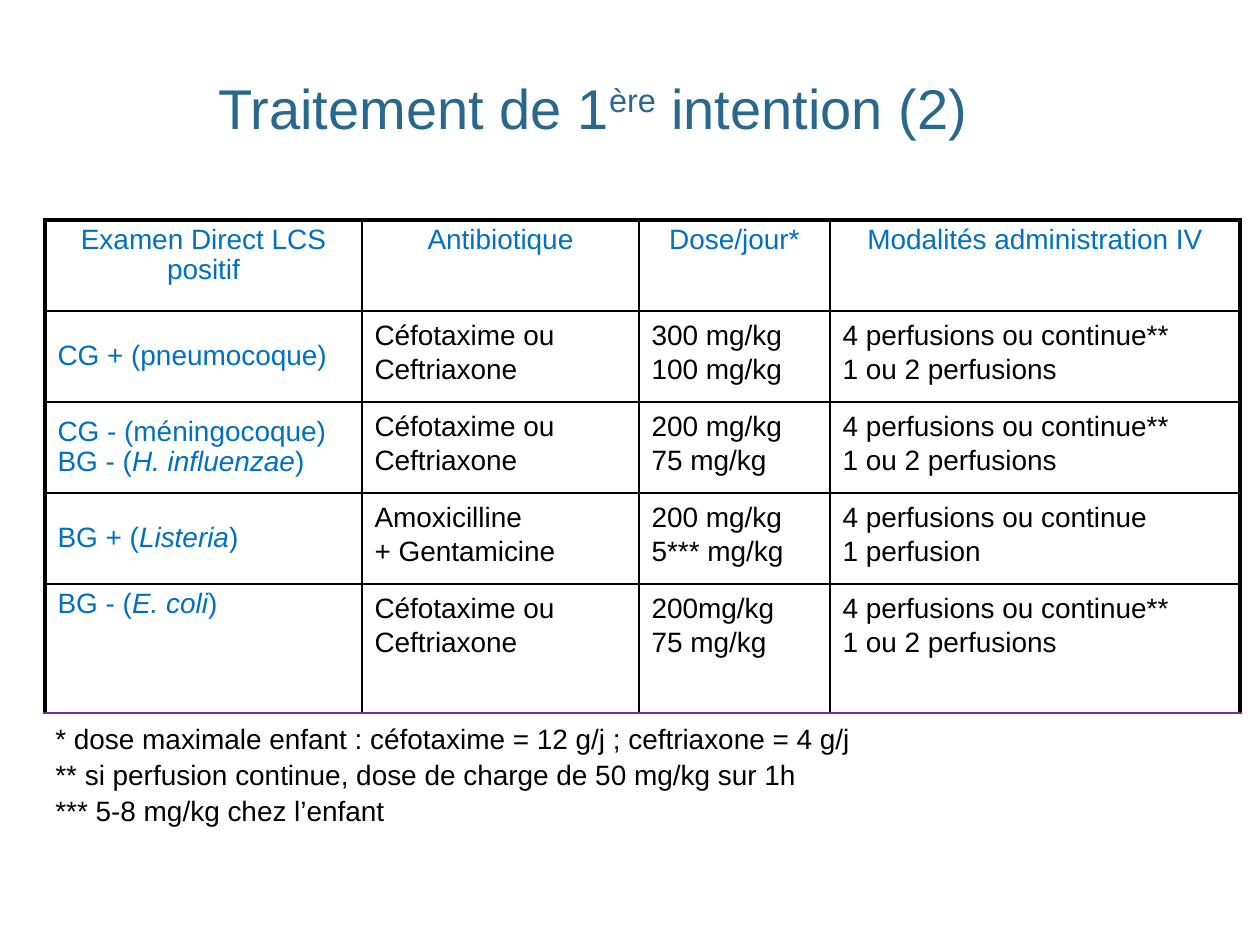
import pptx
import pptx.dml.color
import pptx.enum.text
import pptx.oxml
import pptx.oxml.ns
import pptx.util

PX = pptx.util.Inches(1) / 126
FONT = "Arial"
COLORS = {"title": "28688E", "label": "0070C0", "text": "000000",
          "border": "000000", "bottom": "7030A0", "cell": "FFFFFF"}
ALIGN = pptx.enum.text.PP_ALIGN
ANCHOR = pptx.enum.text.MSO_ANCHOR

COL_WIDTHS = [317, 277, 191, 410]
ROW_HEIGHTS = [91, 91, 91, 91, 129]
HEADERS = ["Examen Direct LCS positif", "Antibiotique", "Dose/jour*",
           "Modalités administration IV"]
CEFALOSPORINS = ["Céfotaxime ou", "Ceftriaxone"]
PERFUSIONS = ["4 perfusions ou continue**", "1 ou 2 perfusions"]
# In germ labels, asterisks enclose the italic part.
ROWS = [
    (["CG + (pneumocoque)"], CEFALOSPORINS,
     ["300 mg/kg", "100 mg/kg"], PERFUSIONS),
    (["CG - (méningocoque)", "BG - (*H. influenzae*)"], CEFALOSPORINS,
     ["200 mg/kg", "75 mg/kg"], PERFUSIONS),
    (["BG + (*Listeria*)"], ["Amoxicilline", "+ Gentamicine"],
     ["200 mg/kg", "5*** mg/kg"], ["4 perfusions ou continue", "1 perfusion"]),
    (["BG - (*E. coli*)"], CEFALOSPORINS,
     ["200mg/kg", "75 mg/kg"], PERFUSIONS),
]
NOTES = ["* dose maximale enfant : céfotaxime = 12 g/j ; ceftriaxone = 4 g/j",
         "** si perfusion continue, dose de charge de 50 mg/kg sur 1h",
         "*** 5-8 mg/kg chez l’enfant"]


def px(n):
    return pptx.util.Emu(round(n * PX))


def rgb(name):
    return pptx.dml.color.RGBColor.from_string(COLORS[name])


def add_run(p, text, color, size=16, italic=None):
    r = p.add_run()
    r.text = text
    r.font.name = FONT
    r.font.size = pptx.util.Pt(size)
    r.font.color.rgb = rgb(color)
    r.font.italic = italic
    return r


def paragraphs(tf, count):
    """Return the first paragraph of the frame and as many new ones as needed."""
    return [tf.paragraphs[0]] + [tf.add_paragraph() for _ in range(count - 1)]


def set_border(cell, side, color, width):
    line = pptx.oxml.parse_xml(
        f'<a:{side} {pptx.oxml.ns.nsdecls("a")} w="{pptx.util.Pt(width)}">'
        f'<a:solidFill><a:srgbClr val="{COLORS[color]}"/></a:solidFill>'
        f'</a:{side}>')
    cell._tc.get_or_add_tcPr().append(line)


def format_cell(cell, row, col):
    last_row, last_col = len(ROW_HEIGHTS) - 1, len(COL_WIDTHS) - 1
    set_border(cell, "lnL", "border", 2.25 if col == 0 else 1)
    set_border(cell, "lnR", "border", 2.25 if col == last_col else 1)
    set_border(cell, "lnT", "border", 2.25 if row == 0 else 1)
    set_border(cell, "lnB", "bottom" if row == last_row else "border", 1)
    cell.fill.solid()
    cell.fill.fore_color.rgb = rgb("cell")
    if col == 0 and 0 < row < last_row:
        cell.vertical_anchor = ANCHOR.MIDDLE


def fill_cell(cell, lines, is_label, align):
    for p, line in zip(paragraphs(cell.text_frame, len(lines)), lines):
        p.alignment = align
        p.line_spacing = 0.95 if is_label else 1.1
        if is_label:
            for i, part in enumerate(line.split("*")):
                add_run(p, part, "label", italic=i % 2 == 1)
        else:
            add_run(p, line, "text")


def add_title(s):
    sp = s.shapes.title
    sp.left, sp.top, sp.width, sp.height = px(28), px(37), px(1130), px(111)
    tf = sp.text_frame
    tf.auto_size = pptx.enum.text.MSO_AUTO_SIZE.NONE
    tf.vertical_anchor = ANCHOR.BOTTOM
    p = tf.paragraphs[0]
    p.alignment = ALIGN.CENTER
    p.line_spacing = 0.9
    add_run(p, "Traitement de 1", "title", 32)
    r = add_run(p, "ère", "title", 32)
    r.font._element.set("baseline", "30000")
    add_run(p, " intention (2)", "title", 32)


def add_treatment_table(s):
    table = s.shapes.add_table(
        len(ROW_HEIGHTS), len(COL_WIDTHS), px(45), px(220),
        px(sum(COL_WIDTHS)), px(sum(ROW_HEIGHTS))).table
    table.first_row = table.horz_banding = False
    for column, width in zip(table.columns, COL_WIDTHS):
        column.width = px(width)
    for row, height in zip(table.rows, ROW_HEIGHTS):
        row.height = px(height)
    for col, header in enumerate(HEADERS):
        # The asterisk of a header is a footnote mark, not italic markup.
        cell = table.cell(0, col)
        format_cell(cell, 0, col)
        p = cell.text_frame.paragraphs[0]
        p.alignment = ALIGN.CENTER
        p.line_spacing = 0.95
        add_run(p, header, "label")
    for row, contents in enumerate(ROWS, 1):
        for col, lines in enumerate(contents):
            cell = table.cell(row, col)
            format_cell(cell, row, col)
            fill_cell(cell, lines, col == 0, ALIGN.LEFT)


def add_notes(s):
    tf = s.shapes.add_textbox(px(43), px(715), px(1247), px(152)).text_frame
    tf.word_wrap = True
    for i, (p, note) in enumerate(zip(paragraphs(tf, len(NOTES)), NOTES)):
        if i:
            p.space_before = pptx.util.Pt(1.6)
        add_run(p, note, "text")


def main():
    prs = pptx.Presentation()
    prs.slide_width, prs.slide_height = px(1260), px(945)
    s = prs.slides.add_slide(prs.slide_layouts[5])
    add_title(s)
    add_treatment_table(s)
    add_notes(s)
    prs.save("out.pptx")


if __name__ == "__main__":
    main()
